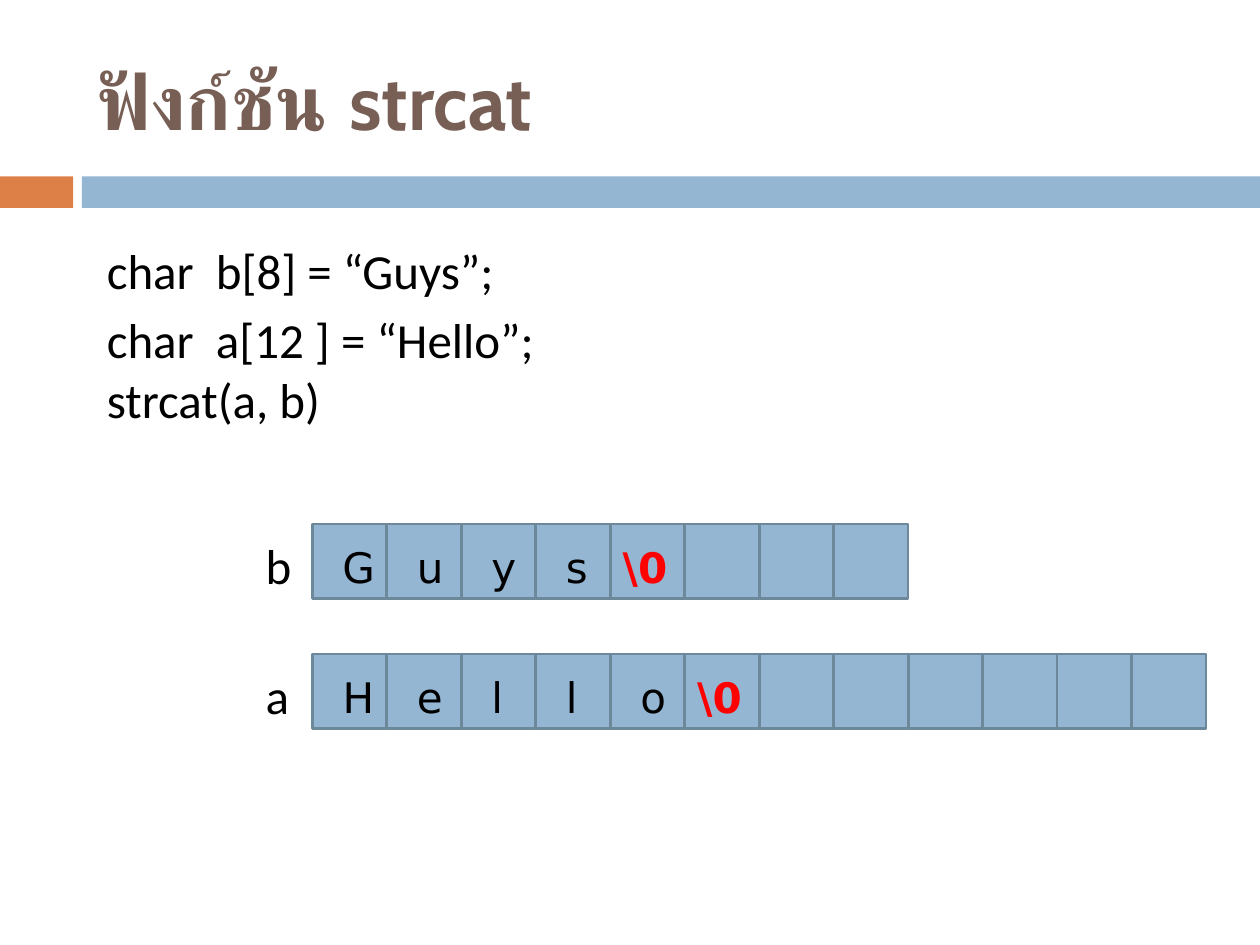
from dataclasses import dataclass

from pptx import Presentation
from pptx.dml.color import RGBColor
from pptx.enum.shapes import MSO_SHAPE
from pptx.enum.text import MSO_ANCHOR
from pptx.util import Inches, Pt

RECTANGLE = MSO_SHAPE.RECTANGLE
TOP = MSO_ANCHOR.TOP
MIDDLE = MSO_ANCHOR.MIDDLE


@dataclass(frozen=True)
class Theme:
    orange: str = "DD8047"
    blue: str = "94B6D2"
    cell_line: str = "6D879B"
    brown: str = "775F55"
    black: str = "000000"
    red: str = "FF0000"
    title_font: str = "Cabin"
    code_font: str = "Calibri"
    letter_font: str = "DejaVu Sans"
    title_size: int = 44
    code_size: int = 28
    letter_size: int = 24


THEME = Theme()
TERMINATOR = "\\0"

# Array geometry in inches
CELL_SIZE = 0.59
CELL_PITCH = 0.591
ARRAY_LEFT = 2.48
LABEL_LEFT = 2.01
LETTER_WIDTHS = {"G": 0.46, "H": 0.45, "l": 0.29}
DEFAULT_LETTER_WIDTH = 0.4

CODE_LINES = [
    ("char  b[8] = “Guys”;", 1.86),
    ("char  a[12 ] = “Hello”;", 2.41),
    ("strcat(a, b)", 2.88),
]

# Name, contents, number of cells, top
ARRAYS = [
    ("b", "Guys", 8, 4.16),
    ("a", "Hello", 12, 5.19),
]


def add_rectangle(slide, left, top, width, height, fill, line=None):
    shape = slide.shapes.add_shape(
        RECTANGLE, Inches(left), Inches(top), Inches(width), Inches(height))
    shape.shadow.inherit = False
    shape.fill.solid()
    shape.fill.fore_color.rgb = RGBColor.from_string(fill)
    if line:
        shape.line.color.rgb = RGBColor.from_string(line)
        shape.line.width = Pt(1.5)
    else:
        shape.line.fill.background()


def add_text(slide, text, left, top, width, height, font, size,
             color=THEME.black, bold=False, anchor=TOP):
    box = slide.shapes.add_textbox(
        Inches(left), Inches(top), Inches(width), Inches(height))
    frame = box.text_frame
    frame.word_wrap = True
    frame.vertical_anchor = anchor
    paragraph = frame.paragraphs[0]
    paragraph.text = text
    paragraph.font.name = font
    paragraph.font.size = Pt(size)
    paragraph.font.bold = bold
    paragraph.font.color.rgb = RGBColor.from_string(color)


def add_code(slide, text, left, top, width):
    add_text(slide, text, left, top, width, 0.57,
             THEME.code_font, THEME.code_size)


def add_array(slide, name, contents, length, top):
    for index in range(length):
        add_rectangle(slide, ARRAY_LEFT + index * CELL_PITCH, top,
                      CELL_SIZE, CELL_SIZE, THEME.blue, THEME.cell_line)

    add_code(slide, name, LABEL_LEFT, top + 0.04, 0.55)

    letter_top = top + 0.09
    for index, letter in enumerate(contents):
        add_text(slide, letter, ARRAY_LEFT + 0.14 + index * CELL_PITCH,
                 letter_top, LETTER_WIDTHS.get(letter, DEFAULT_LETTER_WIDTH),
                 0.5, THEME.letter_font, THEME.letter_size)
    add_text(slide, TERMINATOR, ARRAY_LEFT + len(contents) * CELL_PITCH,
             letter_top, 0.66, 0.5, THEME.letter_font, THEME.letter_size,
             THEME.red, bold=True)


def main():
    presentation = Presentation()
    presentation.slide_width = Inches(10)
    presentation.slide_height = Inches(7.5)
    slide = presentation.slides.add_slide(presentation.slide_layouts[6])

    # Header band and title
    add_rectangle(slide, 0, 1.4, 0.58, 0.25, THEME.orange)
    add_rectangle(slide, 0.65, 1.4, 9.35, 0.25, THEME.blue)
    add_text(slide, "ฟังก์ชัน strcat", 0.67, 0.25, 8.92, 1.08,
             THEME.title_font, THEME.title_size, THEME.brown,
             bold=True, anchor=MIDDLE)

    # Code
    for text, top in CODE_LINES:
        add_code(slide, text, 0.75, top, 3.94)

    # Arrays in memory
    for name, contents, length, top in ARRAYS:
        add_array(slide, name, contents, length, top)

    presentation.save("out.pptx")


if __name__ == "__main__":
    main()
